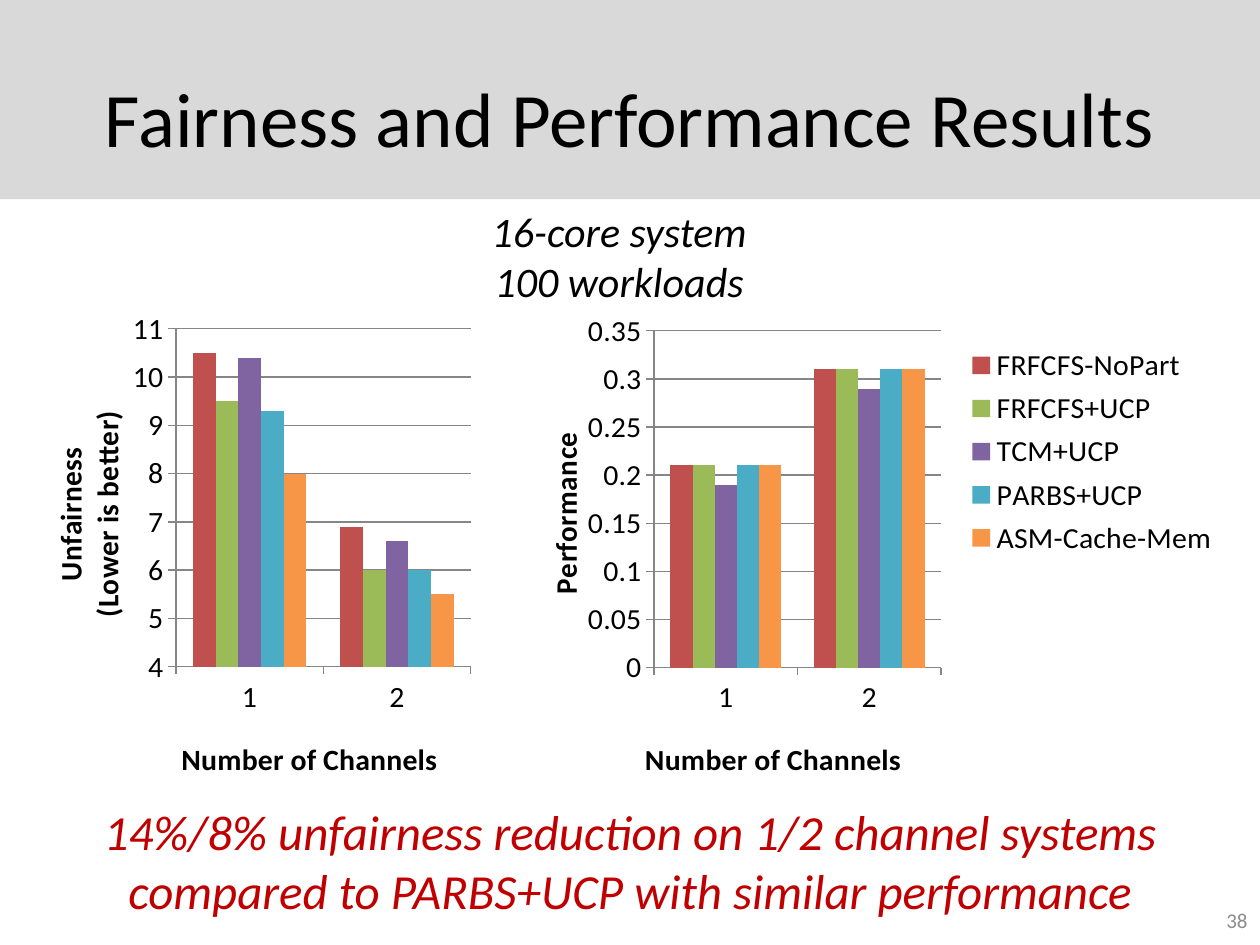
from lxml.etree import SubElement
from pptx import Presentation
from pptx.chart.data import CategoryChartData
from pptx.dml.color import RGBColor
from pptx.enum.chart import XL_CHART_TYPE, XL_LEGEND_POSITION, XL_TICK_MARK
from pptx.enum.shapes import MSO_SHAPE
from pptx.enum.text import MSO_ANCHOR, PP_ALIGN
from pptx.oxml.ns import qn
from pptx.util import Inches, Pt

COLORS = {"band": "D9D9D9", "text": "000000", "number": "8C8C8C", "accent": "C00000", "grid": "868686"}
SERIES = ["C0504D", "9BBB59", "8064A2", "4BACC6", "F79646"]
SCHEMES = ["FRFCFS-NoPart", "FRFCFS+UCP", "TCM+UCP", "PARBS+UCP", "ASM-Cache-Mem"]
UNFAIR = [(10.5, 6.9), (9.5, 6), (10.4, 6.6), (9.3, 6), (8, 5.5)]
PERF = [(0.21, 0.31), (0.21, 0.31), (0.19, 0.29), (0.21, 0.31), (0.21, 0.31)]


def rgb(name):
    return RGBColor.from_string(COLORS[name])


def place(parent, index, x, y, w=None, h=None):
    for old in parent.findall(qn("c:layout")):
        parent.remove(old)
    layout = SubElement(parent, qn("c:layout"))
    parent.insert(index, layout)
    manual = SubElement(layout, qn("c:manualLayout"))
    parts = {"xMode": "edge", "yMode": "edge", "x": x, "y": y, "w": w, "h": h}
    if parent.tag == qn("c:plotArea"):
        parts = {"layoutTarget": "inner", **parts}
    for tag, value in parts.items():
        if value is not None:
            SubElement(manual, qn(f"c:{tag}")).set("val", str(value))


class Deck:
    font = "Calibri"

    def __init__(self):
        self.file = Presentation()
        self.file.slide_width, self.file.slide_height = Inches(10), Inches(7.5)
        self.slide = self.file.slides.add_slide(self.file.slide_layouts[5])

    def style(self, font, size, color="text", bold=False, italic=False):
        font.name, font.size = self.font, Pt(size)
        font.bold, font.italic = bold, italic
        font.color.rgb = rgb(color)

    def band(self, *box):
        shape = self.slide.shapes.add_shape(MSO_SHAPE.RECTANGLE, *map(Inches, box))
        shape.shadow.inherit = False
        shape.fill.solid()
        shape.fill.fore_color.rgb = rgb("band")
        shape.line.fill.background()
        self.slide.shapes._spTree.insert(2, shape._element)

    def title(self, text, *box):
        shape = self.slide.shapes.title
        shape.left, shape.top, shape.width, shape.height = map(Inches, box)
        shape.text_frame.vertical_anchor = MSO_ANCHOR.MIDDLE
        self.label(shape.text_frame, text, 44)

    def text(self, text, box, size, anchor=MSO_ANCHOR.TOP, **look):
        frame = self.slide.shapes.add_textbox(*map(Inches, box)).text_frame
        frame.word_wrap = True
        frame.vertical_anchor = anchor
        self.label(frame, text, size, **look)

    def label(self, frame, text, size, align=PP_ALIGN.CENTER, **look):
        frame.text = text
        for para in frame.paragraphs:
            para.alignment = align
            self.style(para.font, size, **look)

    def axis(self, axis, text, spot):
        axis.major_tick_mark = XL_TICK_MARK.OUTSIDE
        axis.minor_tick_mark = XL_TICK_MARK.NONE
        axis.format.line.color.rgb = rgb("grid")
        self.style(axis.tick_labels.font, 17)
        self.label(axis.axis_title.text_frame, text, 17, bold=True)
        place(axis.axis_title._element, 1, *spot)

    def chart(self, box, names, rows, label, span, step, plot, spots, legend=None):
        data = CategoryChartData()
        data.categories = ["1", "2"]
        for name, row in zip(names, rows):
            data.add_series(name, row)
        chart = self.slide.shapes.add_chart(
            XL_CHART_TYPE.COLUMN_CLUSTERED, *map(Inches, box), data).chart
        self.style(chart.font, 17)
        chart.has_title = False
        bars = chart.plots[0]
        bars.gap_width, bars.overlap, bars.vary_by_categories = 150, 0, False
        for series, color in zip(bars.series, SERIES):
            series.format.fill.solid()
            series.format.fill.fore_color.rgb = RGBColor.from_string(color)
        value = chart.value_axis
        value.minimum_scale, value.maximum_scale = span
        value.major_unit = step
        value.has_major_gridlines = True
        value.major_gridlines.format.line.color.rgb = rgb("grid")
        self.axis(chart.category_axis, "Number of Channels", spots[0])
        self.axis(value, label, spots[1])
        place(chart._chartSpace.chart.plotArea, 0, *plot)
        chart.has_legend = legend is not None
        if legend:
            chart.legend.position = XL_LEGEND_POSITION.RIGHT
            chart.legend.include_in_layout = False
            self.style(chart.legend.font, 17)
            place(chart.legend._element, 1, *legend)


def main():
    deck = Deck()
    deck.band(0, 0, 10, 1.58)
    deck.title("Fairness and Performance Results", 0.5, 0.3, 9, 1.25)
    deck.text("38", (7.67, 7.1, 2.33, 0.4), 12, MSO_ANCHOR.MIDDLE,
              align=PP_ALIGN.RIGHT, color="number")
    deck.text("16-core system 100 workloads", (3.58, 1.58, 2.67, 0.91), 24, italic=True)
    deck.text("14%/8% unfairness reduction on 1/2 channel systems "
              "compared to PARBS+UCP with similar performance",
              (0, 6.31, 10, 1.04), 28, color="accent", italic=True)
    deck.chart((0.14, 2.42, 5.71, 3.83), [f"Series {n}" for n in range(1, 6)], UNFAIR,
               "Unfairness\n(Lower is better)", (4, 11), 1,
               (0.22, 0.05, 0.41, 0.71), [(0.22, 0.9), (0.04, 0.22)])
    deck.chart((4.05, 2.4, 5.7, 3.85), SCHEMES, PERF, "Performance", (0, 0.35), 0.05,
               (0.2, 0.06, 0.4, 0.71), [(0.18, 0.91), (0.04, 0.27)],
               (0.63, 0.08, 0.36, 0.47))
    deck.file.save("out.pptx")


if __name__ == "__main__":
    main()
